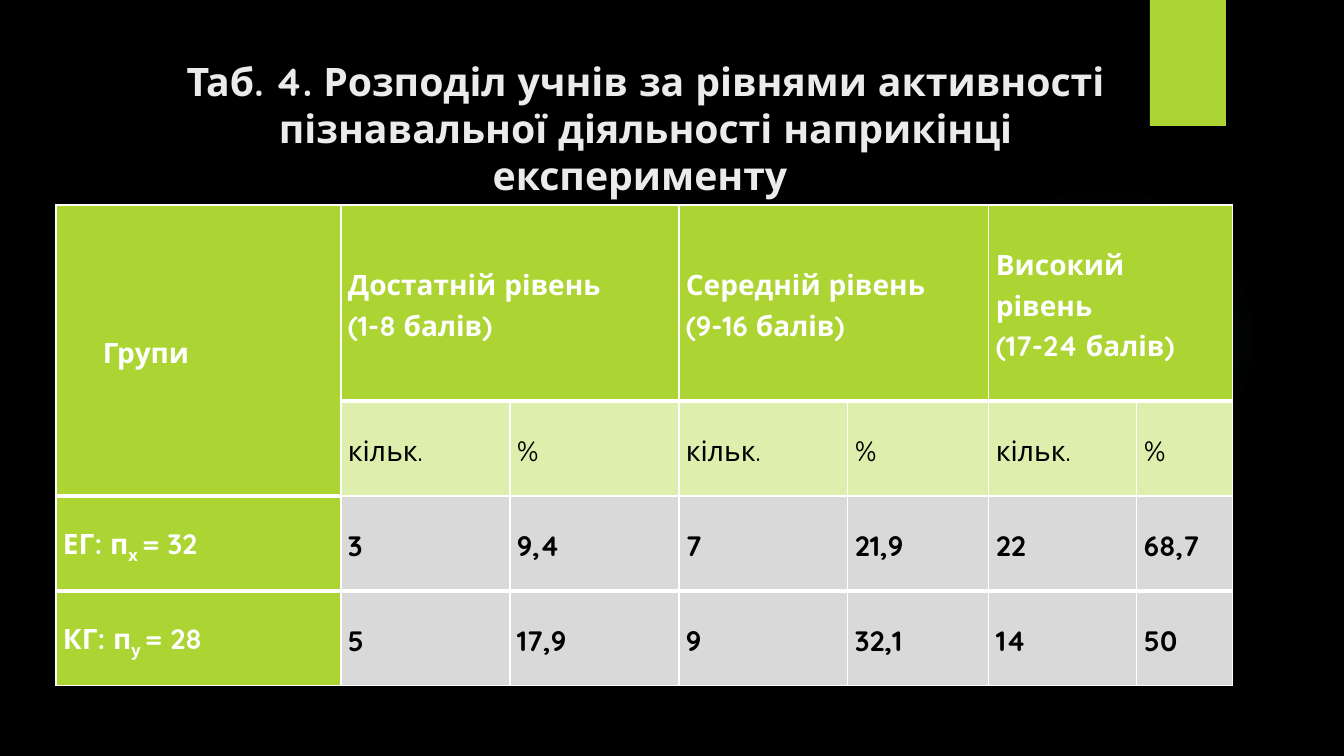
import pptx
import pptx.dml.color
import pptx.enum.shapes
import pptx.enum.text
import pptx.oxml
import pptx.oxml.ns
import pptx.util

RGBColor = pptx.dml.color.RGBColor
BLACK = RGBColor(0x00, 0x00, 0x00)
WHITE = RGBColor(0xFF, 0xFF, 0xFF)
PALE = RGBColor(0xEB, 0xEB, 0xEB)
LIME = RGBColor(0xAC, 0xD4, 0x33)
LIGHT_LIME = RGBColor(0xDE, 0xEE, 0xAD)
GRAY = RGBColor(0xD9, 0xD9, 0xD9)
SKY = RGBColor(0x7A, 0xC4, 0xF0)

MIDDLE = pptx.enum.text.MSO_ANCHOR.MIDDLE
SHAPES = pptx.enum.shapes.MSO_SHAPE

COLUMN_WIDTHS = [285, 169, 169, 169, 141, 148, 96]
ROW_HEIGHTS = [196, 95, 95, 95]
LEVELS = ["Достатній рівень\n(1-8 балів)", "Середній рівень\n(9-16 балів)", "Високий рівень\n(17-24 балів)"]
GROUPS = [
    (["ЕГ: п", "х ", "= 32"], ["3", "9,4", "7", "21,9", "22", "68,7"]),
    (["КГ: п", "у ", "= 28"], ["5", "17,9", "9", "32,1", "14", "50"]),
]


def px(length):
    return pptx.util.Emu(round(length * 914400 / 100.8))


def write_text(text_frame, text, font="Quicksand", size=20, color=BLACK, bold=True,
               align=None, line_spacing=None, indent=0):
    """Odd pieces of a list are set as subscripts."""
    pieces_by_line = [text] if isinstance(text, list) else [[line] for line in text.split("\n")]
    for number, pieces in enumerate(pieces_by_line):
        paragraph = text_frame.add_paragraph() if number else text_frame.paragraphs[0]
        paragraph.alignment = align
        paragraph.line_spacing = line_spacing
        if indent:
            paragraph._p.get_or_add_pPr().set("marL", str(px(indent)))
        for position, piece in enumerate(pieces):
            run = paragraph.add_run()
            run.text = piece
            run.font.name = font
            run.font.size = pptx.util.Pt(size)
            run.font.bold = bold
            run.font.color.rgb = color
            if position % 2:
                run._r.get_or_add_rPr().set("baseline", "-25000")


class SlideBuilder:
    def __init__(self, presentation, background):
        self.slide = presentation.slides.add_slide(presentation.slide_layouts[6])
        self.slide.background.fill.solid()
        self.slide.background.fill.fore_color.rgb = background

    def shape(self, kind, left, top, width, height, color):
        shape = self.slide.shapes.add_shape(kind, px(left), px(top), px(width), px(height))
        shape.shadow.inherit = False
        shape.fill.solid()
        shape.fill.fore_color.rgb = color
        shape.line.fill.background()
        return shape

    def glow(self, left, top, size, color, stops):
        shape = self.shape(SHAPES.OVAL, left, top, size, size, color)
        stop_xml = "".join(
            f'<a:gs pos="{position * 1000}"><a:srgbClr val="{color}">'
            f'<a:alpha val="{alpha * 1000}"/></a:srgbClr></a:gs>'
            for position, alpha in stops
        )
        gradient = pptx.oxml.parse_xml(
            f'<a:gradFill {pptx.oxml.ns.nsdecls("a")}><a:gsLst>{stop_xml}</a:gsLst>'
            '<a:path path="circle"><a:fillToRect l="50000" t="50000" r="50000" b="50000"/>'
            '</a:path></a:gradFill>'
        )
        properties = shape._element.spPr
        properties.replace(properties.find(pptx.oxml.ns.qn("a:solidFill")), gradient)

    def title(self, left, top, width, height, text, **text_format):
        box = self.slide.shapes.add_textbox(px(left), px(top), px(width), px(height))
        box.text_frame.word_wrap = True
        box.text_frame.vertical_anchor = MIDDLE
        write_text(box.text_frame, text, **text_format)

    def table(self, left, top, column_widths, row_heights):
        frame = self.slide.shapes.add_table(
            len(row_heights), len(column_widths), px(left), px(top),
            px(sum(column_widths)), px(sum(row_heights)))
        table = frame.table
        table.first_row = table.horz_banding = False
        for column, width in zip(table.columns, column_widths):
            column.width = px(width)
        for row, height in zip(table.rows, row_heights):
            row.height = px(height)
        return table

    def cell(self, cell, fill, borders, text="", **text_format):
        cell.margin_left = cell.margin_right = px(7)
        cell.margin_top = cell.margin_bottom = 0
        cell.vertical_anchor = MIDDLE
        properties = cell._tc.get_or_add_tcPr()
        for side, width in borders.items():
            properties.append(pptx.oxml.parse_xml(
                f'<a:ln{side} {pptx.oxml.ns.nsdecls("a")} w="{pptx.util.Pt(width)}">'
                f'<a:solidFill><a:srgbClr val="{WHITE}"/></a:solidFill></a:ln{side}>'))
        cell.fill.solid()
        cell.fill.fore_color.rgb = fill
        if text:
            write_text(cell.text_frame, text, line_spacing=1.15, **text_format)


def fill_levels_table(builder, table):
    level_row = ["Групи"]
    for level in LEVELS:
        level_row += [level, ""]
    rows = [level_row, [""] + ["кільк.", "%"] * len(LEVELS)]
    rows += [[group] + values for group, values in GROUPS]

    for row, texts in enumerate(rows):
        for column, text in enumerate(texts):
            heavy_edges = (1, 3) if column else (1, 2, 3)
            borders = {
                "L": 1,
                "R": 1,
                "T": 3 if row in heavy_edges else 1,
                "B": 3 if row + 1 in heavy_edges else 1,
            }
            heading = row == 0 or column == 0
            fill = LIME if heading else LIGHT_LIME if row == 1 else GRAY
            builder.cell(table.cell(row, column), fill, borders, text,
                         color=WHITE if heading else BLACK, bold=heading or row > 1,
                         indent=40 if text == "Групи" else 0)

    table.cell(0, 0).merge(table.cell(1, 0))
    for column in range(1, len(COLUMN_WIDTHS), 2):
        table.cell(0, column).merge(table.cell(0, column + 1))


def main():
    presentation = pptx.Presentation()
    presentation.slide_width = px(1344)
    presentation.slide_height = px(756)
    builder = SlideBuilder(presentation, BLACK)
    builder.glow(949, 184, 310, SKY, [(0, 7), (36, 6), (69, 0)])
    builder.shape(SHAPES.RECTANGLE, 1150, 0, 76, 126, LIME)
    builder.title(127, 51, 1037, 154,
                  "Таб. 4. Розподіл учнів за рівнями активності пізнавальної діяльності наприкінці експерименту ",
                  size=28, color=PALE, align=pptx.enum.text.PP_ALIGN.CENTER)
    fill_levels_table(builder, builder.table(56, 205, COLUMN_WIDTHS, ROW_HEIGHTS))
    presentation.save("out.pptx")


if __name__ == "__main__":
    main()
